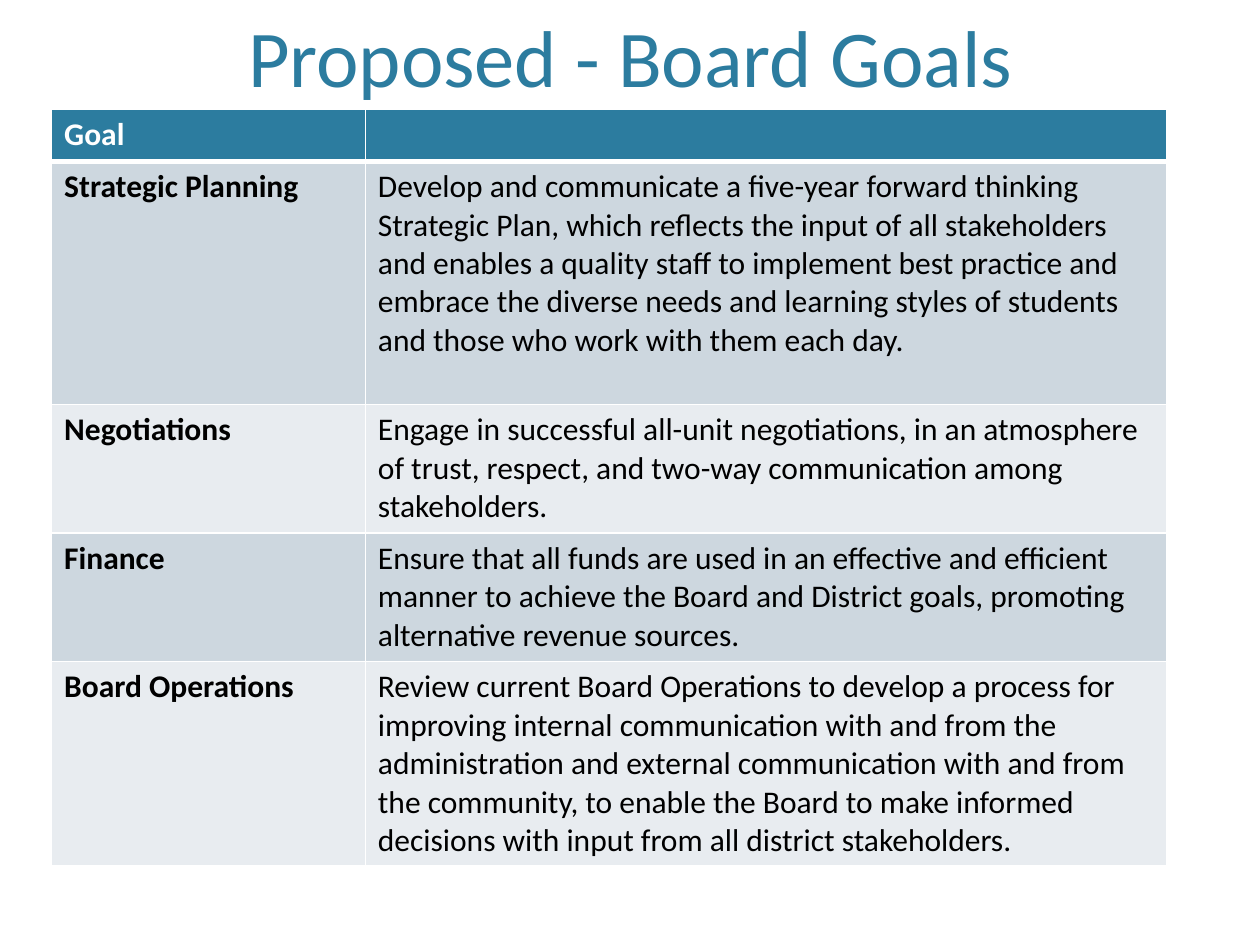
import pptx
import pptx.dml.color
import pptx.enum.text
import pptx.util
from dataclasses import dataclass
from lxml import etree
from pptx.util import Inches


@dataclass(frozen=True)
class Theme:
    font: str = "Calibri"
    accent: str = "2C7C9F"
    text: str = "000000"
    white: str = "FFFFFF"
    bands: tuple = ("CDD7DF", "E8ECF0")
    title_size: int = 46
    body_size: int = 18
    rule: int = 1
    header_rule: int = 3


class GoalSlide:
    def __init__(self, slide, theme):
        self.slide = slide
        self.theme = theme

    def style(self, paragraph, size, color, bold=False):
        for run in paragraph.runs:
            run.font.name = self.theme.font
            run.font.size = pptx.util.Pt(size)
            run.font.bold = bold
            run.font.color.rgb = pptx.dml.color.RGBColor.from_string(color)

    def title(self, text, left, top, width, height):
        box = self.slide.shapes.add_textbox(left, top, width, height)
        frame = box.text_frame
        frame.text = text
        frame.word_wrap = True
        frame.vertical_anchor = pptx.enum.text.MSO_ANCHOR.BOTTOM
        frame.margin_left = frame.margin_right = 0
        frame.margin_top = frame.margin_bottom = 0
        heading = frame.paragraphs[0]
        heading.alignment = pptx.enum.text.PP_ALIGN.CENTER
        self.style(heading, self.theme.title_size, self.theme.accent)

    def borders(self, cell, widths):
        """Draw the cell's left, right, top and bottom rules."""
        properties = cell._tc.get_or_add_tcPr()
        for position, (side, width) in enumerate(zip("LRTB", widths)):
            line = etree.Element(pptx.oxml.ns.qn(f"a:ln{side}"),
                                 w=str(pptx.util.Pt(width)))
            fill = etree.SubElement(line, pptx.oxml.ns.qn("a:solidFill"))
            etree.SubElement(fill, pptx.oxml.ns.qn("a:srgbClr"),
                             val=self.theme.white)
            properties.insert(position, line)

    def cell(self, cell, text, fill, color, bold, rules):
        cell.text = text
        self.style(cell.text_frame.paragraphs[0], self.theme.body_size, color, bold)
        cell.fill.solid()
        cell.fill.fore_color.rgb = pptx.dml.color.RGBColor.from_string(fill)
        self.borders(cell, rules)

    def table(self, rows, left, top, widths, heights):
        theme = self.theme
        table = self.slide.shapes.add_table(
            len(rows), len(widths), left, top, sum(widths), sum(heights)).table
        for column, width in zip(table.columns, widths):
            column.width = width
        for r, (texts, height) in enumerate(zip(rows, heights)):
            table.rows[r].height = height
            header = r == 0
            fill = theme.accent if header else theme.bands[(r - 1) % 2]
            color = theme.white if header else theme.text
            above = theme.header_rule if r == 1 else theme.rule
            below = theme.header_rule if header else theme.rule
            for c, text in enumerate(texts):
                self.cell(table.cell(r, c), text, fill, color, header or c == 0,
                          (theme.rule, theme.rule, above, below))


GOALS = [
    ("Goal", ""),
    ("Strategic Planning",
     "Develop and communicate a five-year forward thinking Strategic Plan, "
     "which reflects the input of all stakeholders and enables a quality staff "
     "to implement best practice and embrace the diverse needs and learning "
     "styles of students and those who work with them each day."),
    ("Negotiations",
     "Engage in successful all-unit negotiations, in an atmosphere of trust, "
     "respect, and two-way communication among stakeholders."),
    ("Finance",
     "Ensure that all funds are used in an effective and efficient manner to "
     "achieve the Board and District goals, promoting alternative revenue "
     "sources."),
    ("Board Operations",
     "Review current Board Operations to develop a process for improving "
     "internal communication with and from the administration and external "
     "communication with and from the community, to enable the Board to make "
     "informed decisions with input from all district stakeholders."),
]


def main():
    deck = pptx.Presentation()
    deck.slide_width, deck.slide_height = Inches(10), Inches(7.5)
    board = GoalSlide(deck.slides.add_slide(deck.slide_layouts[6]), Theme())

    # Heading
    board.title("Proposed - Board Goals",
                Inches(0.6), Inches(0.12), Inches(8.8), Inches(0.7))

    # Goals table
    board.table(GOALS, Inches(0.41), Inches(0.87),
                widths=[Inches(w) for w in (2.49, 6.36)],
                heights=[Inches(h) for h in (0.41, 1.93, 1.02, 1.02, 1.62)])

    deck.save("out.pptx")


if __name__ == "__main__":
    main()
